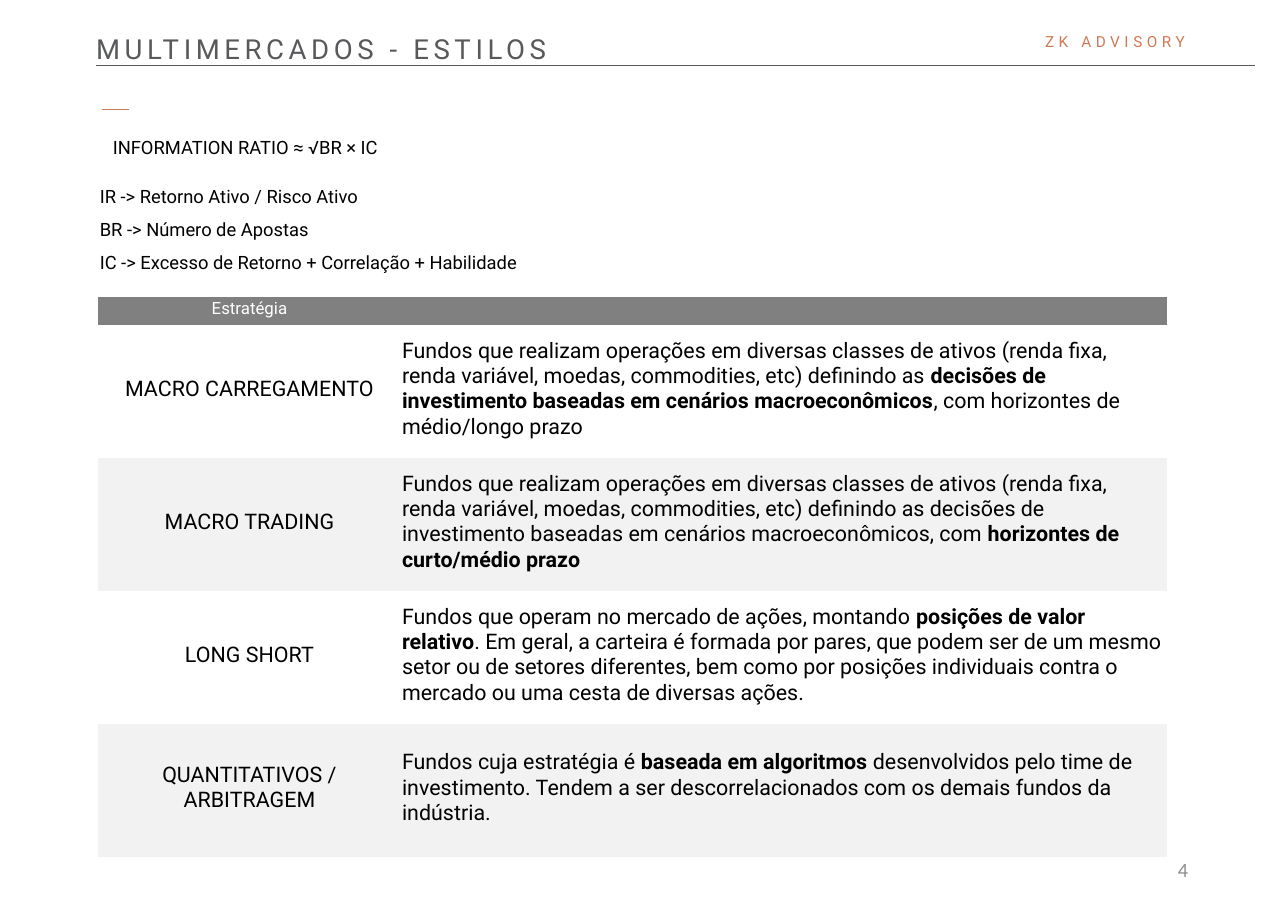
from pptx import Presentation
from pptx.dml.color import RGBColor
from pptx.enum.shapes import MSO_CONNECTOR as Conn
from pptx.enum.text import MSO_ANCHOR as Anchor, MSO_AUTO_SIZE as Auto, PP_ALIGN as Align
from pptx.oxml.ns import qn
from pptx.oxml.xmlchemy import OxmlElement as Node
from pptx.util import Pt

PX = 8298
GREY = "58595B"
BLACK = "000000"
PLAIN = "{2D5ABB26-0587-4C30-8999-92F81FD0307C}"

NOTES = [
    "IR -> Retorno Ativo / Risco Ativo",
    "BR -> Número de Apostas",
    "IC -> Excesso de Retorno + Correlação + Habilidade",
]
STYLES = [
    ("MACRO CARREGAMENTO",
     "Fundos que realizam operações em diversas classes de ativos (renda fixa, "
     "renda variável, moedas, commodities, etc) definindo as *decisões de "
     "investimento baseadas em cenários macroeconômicos*, com horizontes de "
     "médio/longo prazo"),
    ("MACRO TRADING",
     "Fundos que realizam operações em diversas classes de ativos (renda fixa, "
     "renda variável, moedas, commodities, etc) definindo as decisões de "
     "investimento baseadas em cenários macroeconômicos, com *horizontes de "
     "curto/médio prazo*"),
    ("LONG SHORT",
     "Fundos que operam no mercado de ações, montando *posições de valor "
     "relativo*. Em geral, a carteira é formada por pares, que podem ser de um "
     "mesmo setor ou de setores diferentes, bem como por posições individuais "
     "contra o mercado ou uma cesta de diversas ações."),
    ("QUANTITATIVOS / ARBITRAGEM",
     "Fundos cuja estratégia é *baseada em algoritmos *desenvolvidos pelo time "
     "de investimento. Tendem a ser descorrelacionados com os demais fundos da "
     "indústria."),
]


def px(num):
    """Turn pixels into EMU."""
    return num * PX


def tint(code):
    """Turn a hex string into a colour."""
    return RGBColor.from_string(code)


def write(para, text, size, color, face="Roboto", gap=0):
    """Add runs to a paragraph, with text between asterisks in bold."""
    for num, part in enumerate(text.split("*")):
        if not part:
            continue
        run = para.add_run()
        run.text = part
        font = run.font
        font.name, font.size, font.bold = face, Pt(size), num % 2 == 1
        font.color.rgb = tint(color)
        if gap:
            run._r.get_or_add_rPr().set("spc", str(gap * 100))


def place(shape, x, y, w, h):
    """Set a shape's place and size, and return its text frame."""
    shape.left, shape.top, shape.width, shape.height = map(px, (x, y, w, h))
    frame = shape.text_frame
    frame.word_wrap, frame.auto_size = True, Auto.NONE
    frame.vertical_anchor = Anchor.TOP
    return frame


def box(slide, *area):
    """Add a text box and return its text frame."""
    return place(slide.shapes.add_textbox(0, 0, 0, 0), *area)


def head(frame, text, size, color):
    """Write spaced heading text without margins."""
    frame.margin_left = frame.margin_top = 0
    frame.margin_right = frame.margin_bottom = 0
    para = frame.paragraphs[0]
    para.alignment, para.line_spacing = Align.LEFT, 2.0
    write(para, text, size, color, gap=3)


def rule(slide, x, y, end, color):
    """Draw a thin level line."""
    line = slide.shapes.add_connector(Conn.STRAIGHT, px(x), px(y), px(end), px(y))
    line.line.color.rgb, line.line.width = tint(color), Pt(0.5)
    line._element.spPr.append(Node("a:effectLst"))


def indent(para, num):
    """Set a paragraph's left indent."""
    props = para._p.get_or_add_pPr()
    props.set("marL", str(px(num)))
    props.set("indent", "0")


def ratio(slide):
    """Add the ratio formula and its terms."""
    frame = box(slide, 88, 131, 1027, 144)
    para = frame.paragraphs[0]
    indent(para, 14)
    para.space_before = para.space_after = Pt(10)
    write(para, "INFORMATION RATIO ≈ √BR × IC", 12, BLACK)
    for note in NOTES:
        para = frame.add_paragraph()
        indent(para, 1)
        para.line_spacing = 1.5
        write(para, note, 12, BLACK)


def fill(cell, text, size, color, back, align):
    """Format and write one table cell."""
    cell.fill.solid()
    cell.fill.fore_color.rgb = tint(back)
    cell.vertical_anchor = Anchor.MIDDLE
    cell.margin_left = cell.margin_top = cell.margin_right = px(1)
    cell.margin_bottom = px(6)
    para = cell.text_frame.paragraphs[0]
    para.alignment = align
    write(para, text, size, color)
    para._p.get_or_add_endParaRPr().set("sz", str(size * 100))


def grid(slide):
    """Add the table of fund styles."""
    rows = [("Estratégia", "")] + STYLES
    wide, tall = (303, 766), [27] + [133] * len(STYLES)
    table = slide.shapes.add_table(
        len(rows), 2, px(98), px(297), px(sum(wide)), px(sum(tall))).table
    table.horz_banding = table.first_row = False
    table._tbl.tblPr.find(qn("a:tableStyleId")).text = PLAIN
    for col, num in zip(table.columns, wide):
        col.width = px(num)
    for i, row in enumerate(rows):
        table.rows[i].height = px(tall[i])
        back = "808080" if i == 0 else ("F2F2F2", "FFFFFF")[i % 2]
        size, color = (14, BLACK) if i else (11, "FFFFFF")
        for j, text in enumerate(row):
            align = Align.LEFT if j else Align.CENTER
            fill(table.cell(i, j), text, size, color, back, align)


def main():
    """Build and save the slide."""
    deck = Presentation()
    deck.slide_width, deck.slide_height = px(1288), px(911)
    slide = deck.slides.add_slide(deck.slide_layouts[5])
    title = place(slide.shapes.title, 96, -1, 846, 111)
    head(title, "MULTIMERCADOS - ESTILOS", 18, GREY)
    rule(slide, 96, 65, 1255, GREY)
    rule(slide, 102, 109, 129, "C57D5C")
    ratio(slide)
    page = box(slide, 910, 845, 289, 48)
    page.vertical_anchor = Anchor.MIDDLE
    page.paragraphs[0].alignment = Align.RIGHT
    write(page.paragraphs[0], "4", 13.2, "8C8C8C", "Calibri")
    grid(slide)
    head(box(slide, 1045, 14, 161, 37), "ZK ADVISORY", 10, "D17955")
    deck.save("out.pptx")


if __name__ == "__main__":
    main()
